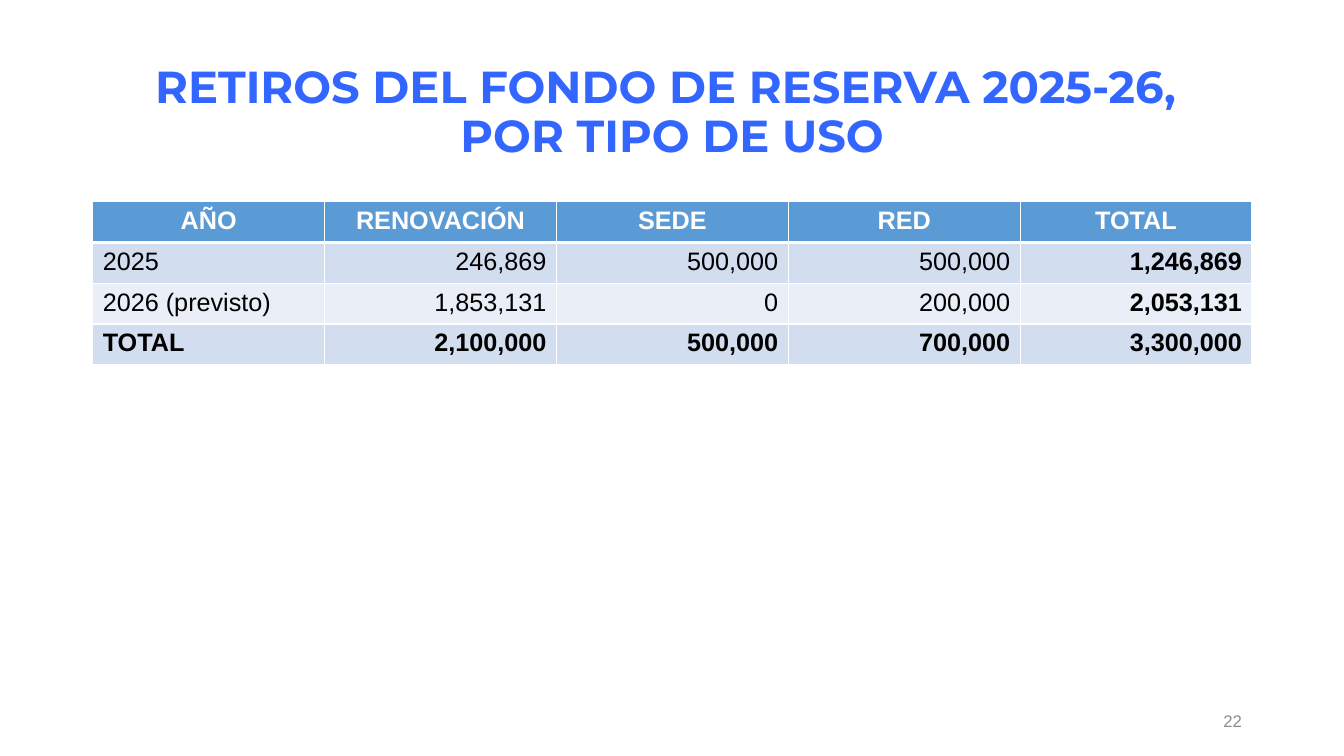
from dataclasses import dataclass

from lxml import etree
from pptx import Presentation
from pptx.dml.color import RGBColor
from pptx.enum.text import MSO_ANCHOR, PP_ALIGN
from pptx.oxml.ns import qn
from pptx.util import Inches, Pt

LEFT, CENTER, RIGHT = PP_ALIGN.LEFT, PP_ALIGN.CENTER, PP_ALIGN.RIGHT
MIDDLE = MSO_ANCHOR.MIDDLE


@dataclass(frozen=True)
class Theme:
    title: str = "3366FF"
    header: str = "5B9BD5"
    band_dark: str = "D2DEEF"
    band_light: str = "EAEFF7"
    white: str = "FFFFFF"
    black: str = "000000"
    gray: str = "8C8C8C"
    title_font: str = "Montserrat"
    body_font: str = "Arial"
    title_size: int = 32
    table_size: int = 18
    number_size: int = 12


THEME = Theme()
MARGIN, CONTENT_WIDTH = 0.92, 11.5
ROW_HEIGHT = 0.405
ROWS = [
    ["AÑO", "RENOVACIÓN", "SEDE", "RED", "TOTAL"],
    ["2025", "246,869", "500,000", "500,000", "1,246,869"],
    ["2026 (previsto)", "1,853,131", "0", "200,000", "2,053,131"],
    ["TOTAL", "2,100,000", "500,000", "700,000", "3,300,000"],
]


def write_lines(frame, lines, align, font, size, color, bold=False):
    """Fill the first paragraph, with a line break between the lines."""
    para = frame.paragraphs[0]
    para.alignment = align
    for index, line in enumerate(lines):
        if index:
            para.add_line_break()
        span = para.add_run()
        span.text = line
        span.font.name = font
        span.font.size = Pt(size)
        span.font.bold = bold
        span.font.color.rgb = RGBColor.from_string(color)
    return para


def set_borders(cell, widths, color):
    """Draw the borders, given as points by side: L, R, T, B."""
    properties = cell._tc.get_or_add_tcPr()
    for index, (side, width) in enumerate(widths.items()):
        line = etree.Element(qn(f"a:ln{side}"), w=str(Pt(width)))
        fill = etree.SubElement(line, qn("a:solidFill"))
        etree.SubElement(fill, qn("a:srgbClr"), val=color)
        properties.insert(index, line)


deck = Presentation()
deck.slide_width, deck.slide_height = Inches(13.333), Inches(7.5)
page = deck.slides.add_slide(deck.slide_layouts[6])

# Title
title_box = page.shapes.add_textbox(
    Inches(MARGIN), Inches(0.4), Inches(CONTENT_WIDTH), Inches(1.45))
title_box.text_frame.word_wrap = True
title_box.text_frame.vertical_anchor = MIDDLE
title_para = write_lines(
    title_box.text_frame,
    ["RETIROS DEL FONDO DE RESERVA 2025-26, ", "POR TIPO DE USO"],
    CENTER, THEME.title_font, THEME.title_size, THEME.title, bold=True)
title_para.line_spacing = 0.9

# Withdrawals by year and use
last_row, last_column = len(ROWS) - 1, len(ROWS[0]) - 1
table = page.shapes.add_table(
    len(ROWS), len(ROWS[0]), Inches(MARGIN), Inches(2),
    Inches(CONTENT_WIDTH), Inches(ROW_HEIGHT * len(ROWS))).table
for row, values in enumerate(ROWS):
    is_header = row == 0
    band = THEME.band_dark if row % 2 else THEME.band_light
    for column, value in enumerate(values):
        cell = table.cell(row, column)
        cell.fill.solid()
        cell.fill.fore_color.rgb = RGBColor.from_string(
            THEME.header if is_header else band)
        set_borders(cell, {"L": 1, "R": 1, "T": 3 if row == 1 else 1,
                           "B": 3 if is_header else 1}, THEME.white)
        align = CENTER if is_header else RIGHT if column else LEFT
        write_lines(
            cell.text_frame, [value], align, THEME.body_font, THEME.table_size,
            THEME.white if is_header else THEME.black,
            bold=row in (0, last_row) or column == last_column)

# Slide number
number_box = page.shapes.add_textbox(
    Inches(MARGIN + CONTENT_WIDTH - 3), Inches(6.95), Inches(3), Inches(0.4))
number_box.text_frame.word_wrap = True
number_box.text_frame.vertical_anchor = MIDDLE
write_lines(number_box.text_frame, ["22"], RIGHT,
            THEME.body_font, THEME.number_size, THEME.gray)

deck.save("out.pptx")
